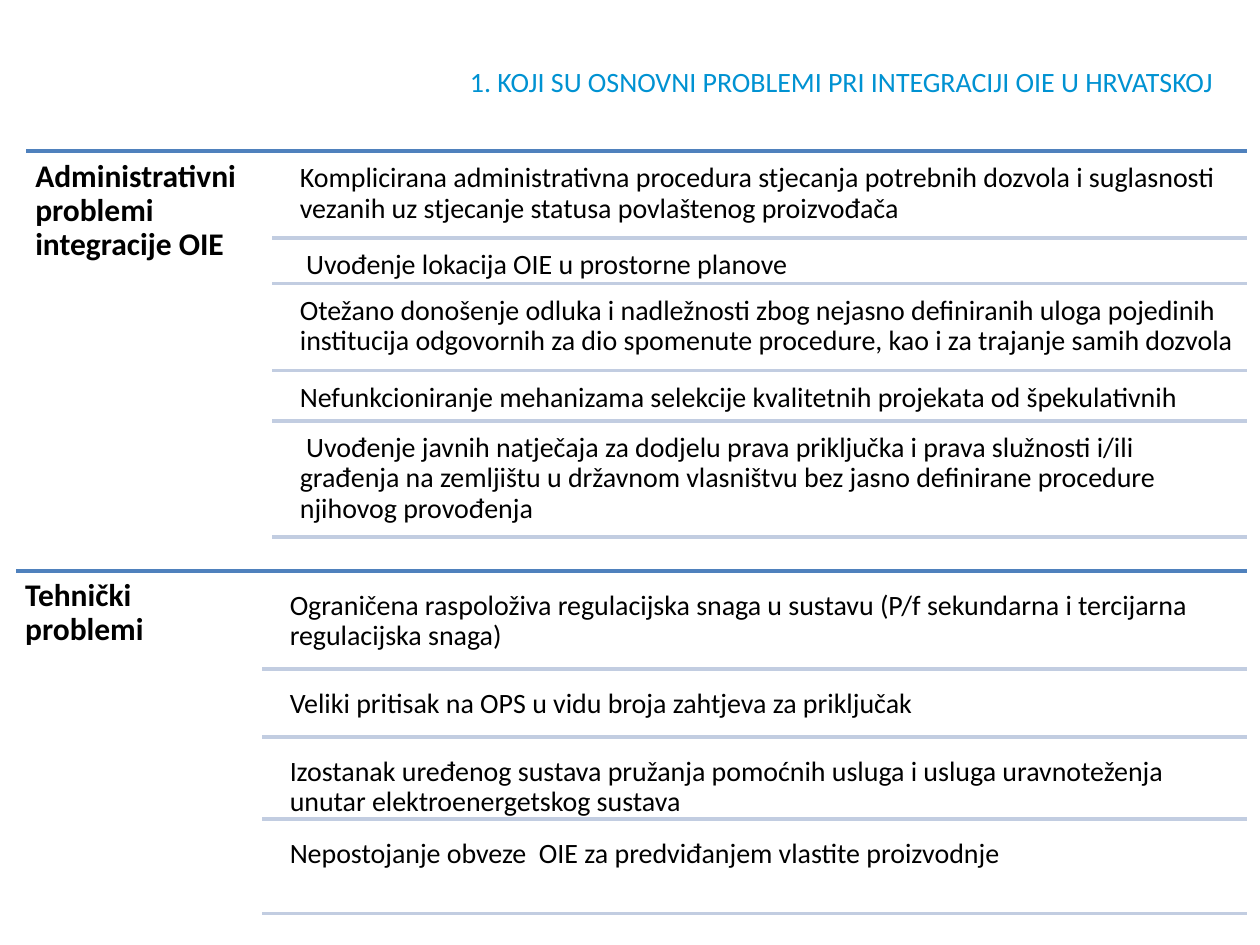
from lxml import etree
from pptx import Presentation
from pptx.dml.color import RGBColor
from pptx.enum import shapes, text
from pptx.oxml.ns import qn
from pptx.util import Inches, Pt

BLACK = RGBColor(0x00, 0x00, 0x00)
TITLE_BLUE = RGBColor(0x00, 0x92, 0xD2)
SECTION_BLUE = RGBColor(0x4F, 0x81, 0xBD)
ROW_BLUE = RGBColor(0xC2, 0xCD, 0xE1)
RIGHT = 9.9
INDENT = 0.15

ADMIN_ROWS = [
    ("Komplicirana administrativna procedura stjecanja potrebnih dozvola i suglasnosti "
     "vezanih uz stjecanje statusa povlaštenog proizvođača", 0.66),
    (" Uvođenje lokacija OIE u prostorne planove", 0.33),
    ("Otežano donošenje odluka i nadležnosti zbog nejasno definiranih uloga pojedinih "
     "institucija odgovornih za dio spomenute procedure, kao i za trajanje samih dozvola", 0.66),
    ("Nefunkcioniranje mehanizama selekcije kvalitetnih projekata od špekulativnih", 0.37),
    (" Uvođenje javnih natječaja za dodjelu prava priključka i prava služnosti i/ili građenja "
     "na zemljištu u državnom vlasništvu bez jasno definirane procedure njihovog provođenja", 0.89),
]
TECH_ROWS = [
    ("Ograničena raspoloživa regulacijska snaga u sustavu (P/f sekundarna i tercijarna "
     "regulacijska snaga)", 0.69),
    ("Veliki pritisak na OPS u vidu broja zahtjeva za priključak", 0.45),
    ("Izostanak uređenog sustava pružanja pomoćnih usluga i usluga uravnoteženja "
     "unutar elektroenergetskog sustava", 0.56),
    ("Nepostojanje obveze  OIE za predviđanjem vlastite proizvodnje", 0.66),
]


def add_run(p, content, size, color, bold=False):
    """Add one formatted run to a paragraph."""
    r = p.add_run()
    r.text = content
    r.font.name = "Calibri"
    r.font.size = Pt(size)
    r.font.bold = bold
    r.font.color.rgb = color


def add_title(s, content):
    """Place and fill the title placeholder."""
    sp = s.shapes.title
    sp.left, sp.top, sp.width, sp.height = map(Inches, (3.63, 0.46, 9, 0.61))
    tf = sp.text_frame
    tf.word_wrap = True
    tf.vertical_anchor = text.MSO_ANCHOR.TOP
    p = tf.paragraphs[0]
    p.alignment = text.PP_ALIGN.LEFT
    add_run(p, content, 16, TITLE_BLUE)


def add_rule(group, left, y, color):
    """Draw a horizontal rule to the common right edge."""
    line = group.shapes.add_connector(
        shapes.MSO_CONNECTOR.STRAIGHT, Inches(left), Inches(y), Inches(RIGHT), Inches(y))
    line.line.color.rgb = color
    line.line.width = Pt(2)
    etree.SubElement(line._element.spPr, qn("a:effectLst"))


def add_text(group, box, content, size, align, bold=False):
    """Add a wrapped text box with tight line spacing."""
    tf = group.shapes.add_textbox(*map(Inches, box)).text_frame
    tf.word_wrap = True
    tf.margin_left = tf.margin_right = tf.margin_top = tf.margin_bottom = Inches(0.07)
    p = tf.paragraphs[0]
    p.alignment = align
    p.line_spacing = 0.9
    add_run(p, content, size, BLACK, bold)


def add_section(s, left, top, height, label, rows, gap):
    """Add a labelled section whose rows each end in a rule."""
    group = s.shapes.add_group_shape()
    label_width = 1.95
    row_left = left + label_width
    text_left = row_left + INDENT
    add_rule(group, left, top, SECTION_BLUE)
    add_text(group, (left, top, label_width, height), label, 18, text.PP_ALIGN.JUSTIFY, True)
    y = top
    for content, row_height in rows:
        y += gap
        add_text(group, (text_left, y, RIGHT - text_left, row_height),
                 content, 16, text.PP_ALIGN.LEFT)
        y += row_height
        add_rule(group, row_left, y, ROW_BLUE)


def main():
    """Build and save the slide."""
    prs = Presentation()
    prs.slide_width, prs.slide_height = Inches(10), Inches(7.5)
    s = prs.slides.add_slide(prs.slide_layouts[5])
    add_title(s, "1. KOJI SU OSNOVNI PROBLEMI PRI INTEGRACIJI OIE U HRVATSKOJ")
    add_section(s, 0.21, 1.2, 3.1, "Administrativni problemi integracije OIE", ADMIN_ROWS, 0.03)
    add_section(s, 0.13, 4.53, 2.8, "Tehnički problemi", TECH_ROWS, 0.09)
    prs.save("out.pptx")


if __name__ == "__main__":
    main()
